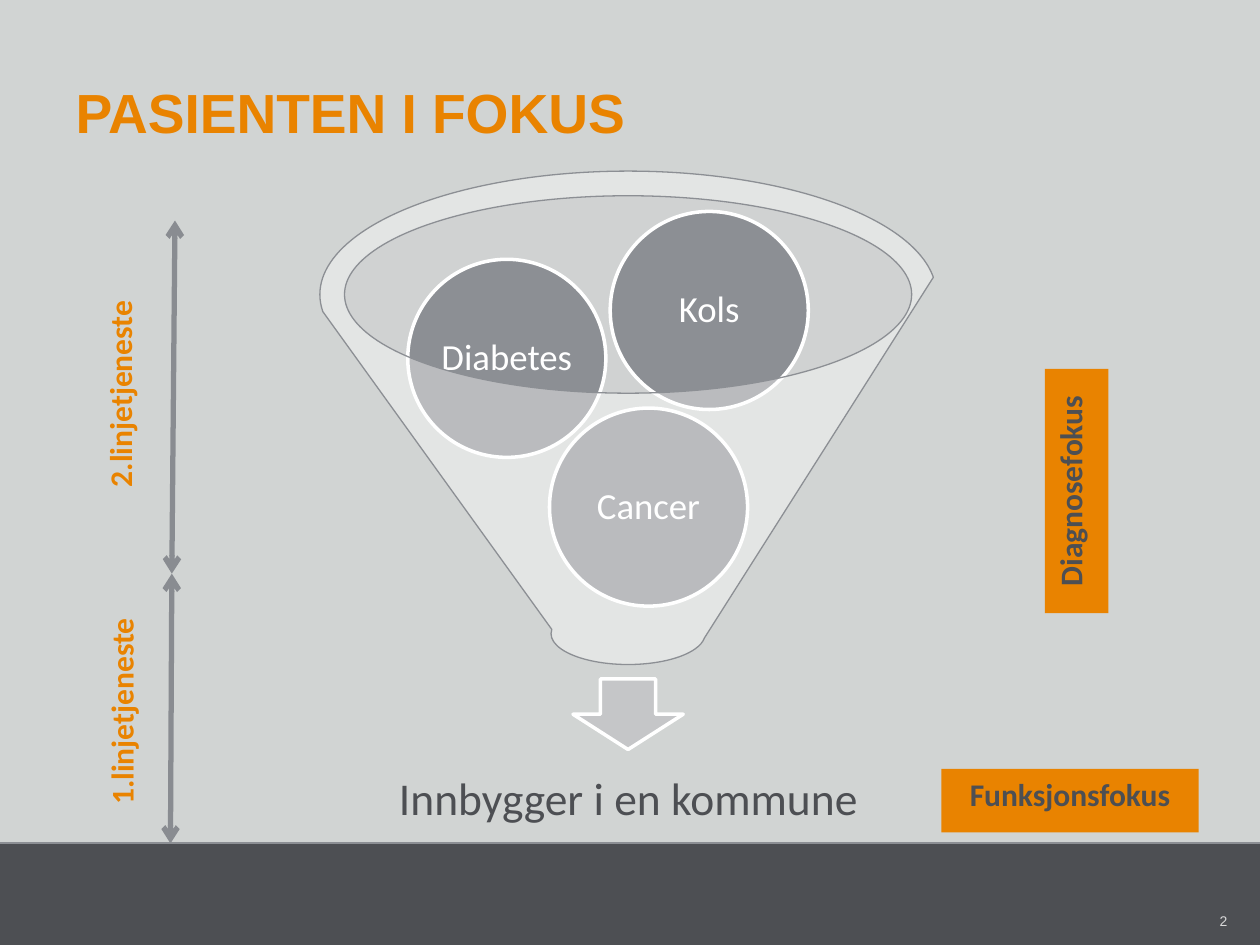
from lxml import etree
from pptx import Presentation
from pptx.dml.color import RGBColor
from pptx.enum import shapes as kinds, text as txt
from pptx.oxml.ns import qn
from pptx.util import Pt

BACKDROP = RGBColor(0xD1, 0xD4, 0xD3)
DARK = RGBColor(0x4D, 0x4F, 0x53)
GREY = RGBColor(0x8C, 0x8F, 0x94)
ARROW_GREY = RGBColor(0x89, 0x8C, 0x91)
PALE_GREY = RGBColor(0xC5, 0xC6, 0xC8)
RIM_GREY = RGBColor(0xD0, 0xD1, 0xD2)
NUMBER_GREY = RGBColor(0xD9, 0xD9, 0xD9)
ORANGE = RGBColor(0xE9, 0x83, 0x00)
WHITE = RGBColor(0xFF, 0xFF, 0xFF)

MIDDLE = txt.MSO_ANCHOR.MIDDLE
CENTER = txt.PP_ALIGN.CENTER


def write(shape, words, size, color, bold=False, font="Calibri", align=CENTER,
          anchor=txt.MSO_ANCHOR.TOP, inset=None, spacing=None, upward=False):
    frame = shape.text_frame
    frame.word_wrap = True
    frame.vertical_anchor = anchor
    if inset is not None:
        frame.margin_left = frame.margin_right = Pt(inset)
        frame.margin_top = frame.margin_bottom = Pt(inset)
    if upward:
        frame._txBody.bodyPr.set("vert", "vert270")
    paragraph = frame.paragraphs[0]
    paragraph.alignment = align
    if spacing:
        paragraph.line_spacing = spacing
    run = paragraph.add_run()
    run.text = words
    run.font.name, run.font.size, run.font.bold = font, Pt(size), bold
    run.font.color.rgb = color


def add_form(slide, preset, box, fill, line=None, width=2, opacity=None):
    form = slide.shapes.add_shape(preset, *map(Pt, box))
    form.shadow.inherit = False
    form.fill.solid()
    form.fill.fore_color.rgb = fill
    if opacity:
        tint = form._element.spPr.find(qn("a:solidFill"))[0]
        etree.SubElement(tint, qn("a:alpha"), val=str(opacity * 1000))
    if line is None:
        form.line.fill.background()
    else:
        form.line.color.rgb = line
        form.line.width = Pt(width)
    return form


def add_label(slide, box, words, size, color, **style):
    label = slide.shapes.add_textbox(*map(Pt, box))
    write(label, words, size, color, **style)


def add_line(slide, start, end, color, width, arrows=False):
    line = slide.shapes.add_connector(
        kinds.MSO_CONNECTOR.STRAIGHT, *map(Pt, start + end))
    line.line.color.rgb = color
    line.line.width = Pt(width)
    if arrows:
        for tip in ("a:headEnd", "a:tailEnd"):
            etree.SubElement(line.line._get_or_add_ln(), qn(tip), type="arrow")
    etree.SubElement(line._element.spPr, qn("a:effectLst"))


def add_title(slide):
    title = slide.shapes.title
    title.left, title.top, title.width, title.height = map(Pt, (36, 42.5, 652, 42.5))
    write(title, "PASIENTEN I FOKUS", 31.5, ORANGE, bold=True, font="Arial",
          align=txt.PP_ALIGN.LEFT, anchor=MIDDLE)


def add_footer(slide):
    add_form(slide, kinds.MSO_SHAPE.RECTANGLE, (0, 481.7, 720, 58.3), DARK)
    add_line(slide, (0, 481.7), (720, 481.7), GREY, 1.25)
    add_label(slide, (666, 517.5, 42.5, 17.3), "2", 8, NUMBER_GREY, font="Arial",
              align=txt.PP_ALIGN.RIGHT, anchor=MIDDLE)


def add_funnel(slide):
    oval = kinds.MSO_SHAPE.OVAL
    add_form(slide, oval, (195.8, 111.6, 324.7, 113), RIM_GREY, opacity=40)
    add_form(slide, kinds.MSO_SHAPE.DOWN_ARROW, (327.4, 388, 63, 40.3),
             PALE_GREY, WHITE)
    add_label(slide, (208, 419.8, 302.4, 75.6), "Innbygger i en kommune", 26, DARK,
              anchor=MIDDLE, inset=14.4, spacing=0.9)
    # Diagnoses dropped into the funnel
    diameter = 113.2
    for diagnosis, left, top in (("Cancer", 314, 233.2), ("Diabetes", 233, 148.2),
                                 ("Kols", 348.7, 120.8)):
        ball = add_form(slide, oval, (left, top, diameter, diameter), GREY, WHITE)
        write(ball, diagnosis, 21, WHITE, anchor=MIDDLE, inset=1, spacing=0.9)
    add_form(slide, kinds.MSO_SHAPE.FUNNEL, (182.8, 97.8, 352.3, 282),
             WHITE, GREY, 0.75, opacity=40)


def add_focus_tags(slide):
    for words, box, upward in (
            ("Diagnosefokus", (597, 210.8, 36.3, 139.6), True),
            ("Funksjonsfokus", (538, 439.3, 147, 36.3), False)):
        tag = add_form(slide, kinds.MSO_SHAPE.RECTANGLE, box, ORANGE)
        write(tag, words, 18, DARK, bold=True, upward=upward)


def add_service_levels(slide):
    for words, left, top, start, end in (
            ("2.linjetjeneste", 54, 155.3, (100, 126), (98.2, 327.8)),
            ("1.linjetjeneste", 54.8, 336.8, (98.2, 327.8), (97.4, 482))):
        add_line(slide, start, end, ARROW_GREY, 3, arrows=True)
        add_label(slide, (left, top, 36.3, 139.6), words, 18, ORANGE,
                  bold=True, upward=True)


def main():
    deck = Presentation()
    deck.slide_width, deck.slide_height = Pt(720), Pt(540)
    slide = deck.slides.add_slide(deck.slide_layouts[5])
    slide.background.fill.solid()
    slide.background.fill.fore_color.rgb = BACKDROP
    add_footer(slide)
    add_title(slide)
    add_funnel(slide)
    add_focus_tags(slide)
    add_service_levels(slide)
    deck.save("out.pptx")


if __name__ == "__main__":
    main()
